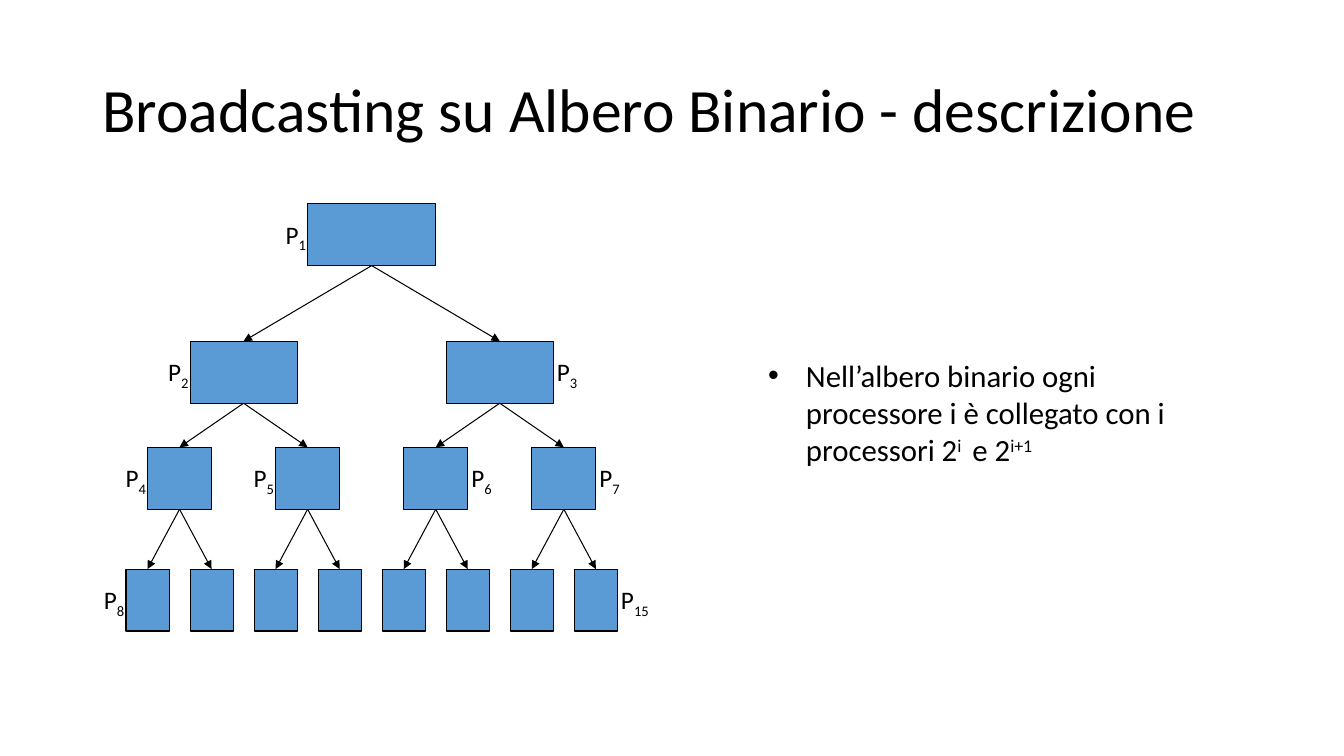
from dataclasses import dataclass

import lxml.etree
import pptx
import pptx.dml.color
import pptx.enum.shapes
import pptx.enum.text
import pptx.oxml.ns
import pptx.util


@dataclass(frozen=True)
class Theme:
    font: str = "Calibri"
    ink: str = "000000"
    node: str = "5B9BD5"
    title_size: int = 44
    body_size: int = 22
    label_size: int = 18
    line_width: float = 0.75


THEME = Theme()
EMU_PER_PX = 9525
SUBSCRIPT, SUPERSCRIPT = -25000, 30000

TREE_LEFT, TREE_WIDTH = 110, 488
NODE_HEIGHT = 59
LEVELS = [(194, 122), (325, 102), (426, 61), (542, 41)]  # top, node width
LABELS_LEFT = (1, 2, 4, 5, 8)
LABELS_RIGHT = (3, 6, 7, 15)


def px(length):
    return pptx.util.Emu(round(length * EMU_PER_PX))


def color(code):
    return pptx.dml.color.RGBColor.from_string(code)


def place(shape, left, top, width, height):
    shape.left, shape.top = px(left), px(top)
    shape.width, shape.height = px(width), px(height)


def add_run(paragraph, text, size, baseline=0):
    """Append a run; baseline is in thousandths of a percent."""
    run = paragraph.add_run()
    run.text = text
    run.font.name = THEME.font
    run.font.size = pptx.util.Pt(size)
    run.font.color.rgb = color(THEME.ink)
    if baseline:
        run.font._element.set("baseline", str(baseline))


def style_line(line):
    line.color.rgb = color(THEME.ink)
    line.width = pptx.util.Pt(THEME.line_width)


def fill_title(title, text):
    place(title, 88, 38, 1104, 139)
    frame = title.text_frame
    frame.auto_size = pptx.enum.text.MSO_AUTO_SIZE.NONE
    frame.vertical_anchor = pptx.enum.text.MSO_ANCHOR.MIDDLE
    paragraph = frame.paragraphs[0]
    paragraph.alignment = pptx.enum.text.PP_ALIGN.LEFT
    paragraph.line_spacing = 0.9
    add_run(paragraph, text, THEME.title_size)


def fill_description(body, pieces):
    """Write one bullet from (text, baseline) pieces."""
    place(body, 722, 335, 428, 116)
    frame = body.text_frame
    frame.auto_size = pptx.enum.text.MSO_AUTO_SIZE.NONE
    paragraph = frame.paragraphs[0]
    paragraph.space_before = pptx.util.Pt(0)
    properties = paragraph._p.get_or_add_pPr()
    properties.set("marL", str(px(36)))
    properties.set("indent", str(px(-36)))
    bullet = lxml.etree.SubElement(properties, pptx.oxml.ns.qn("a:buChar"))
    bullet.set("char", "•")
    for text, baseline in pieces:
        add_run(paragraph, text, THEME.body_size, baseline)


def add_processor(slide, center, top, width):
    processor = slide.shapes.add_shape(
        pptx.enum.shapes.MSO_SHAPE.RECTANGLE,
        px(center - width / 2), px(top), px(width), px(NODE_HEIGHT))
    processor.shadow.inherit = False
    processor.fill.solid()
    processor.fill.fore_color.rgb = color(THEME.node)
    style_line(processor.line)
    return processor


def add_edge(slide, parent, child):
    edge = slide.shapes.add_connector(
        pptx.enum.shapes.MSO_CONNECTOR.STRAIGHT, 0, 0, 0, 0)
    edge.begin_connect(parent, 2)
    edge.end_connect(child, 0)
    style_line(edge.line)
    arrowhead = lxml.etree.SubElement(
        edge.line._get_or_add_ln(), pptx.oxml.ns.qn("a:tailEnd"))
    arrowhead.set("type", "triangle")
    lxml.etree.SubElement(
        edge._element.spPr, pptx.oxml.ns.qn("a:effectLst"))


def add_label(slide, processor, number, on_left):
    width = 40 if number < 10 else 48
    if on_left:
        left = processor.left + px(8 - width)
        alignment = pptx.enum.text.PP_ALIGN.RIGHT
    else:
        left = processor.left + processor.width - px(6)
        alignment = pptx.enum.text.PP_ALIGN.LEFT
    label = slide.shapes.add_textbox(
        left, processor.top + px(10), px(width), px(38))
    frame = label.text_frame
    frame.word_wrap = False
    frame.auto_size = pptx.enum.text.MSO_AUTO_SIZE.SHAPE_TO_FIT_TEXT
    paragraph = frame.paragraphs[0]
    paragraph.alignment = alignment
    add_run(paragraph, "P", THEME.label_size)
    add_run(paragraph, str(number), THEME.label_size, SUBSCRIPT)


def add_tree(slide):
    """Number processors by level, so that the parent of n is n // 2."""
    processors = {}
    for depth, (top, width) in enumerate(LEVELS):
        count = 2 ** depth
        for position in range(count):
            center = TREE_LEFT + TREE_WIDTH * (position + 0.5) / count
            processors[count + position] = add_processor(
                slide, center, top, width)
    for number in range(2, len(processors) + 1):
        add_edge(slide, processors[number // 2], processors[number])
    for number in LABELS_LEFT + LABELS_RIGHT:
        add_label(slide, processors[number], number, number in LABELS_LEFT)


def main():
    presentation = pptx.Presentation()
    presentation.slide_width, presentation.slide_height = px(1280), px(720)
    slide = presentation.slides.add_slide(presentation.slide_layouts[1])
    fill_title(slide.shapes.title, "Broadcasting su Albero Binario - descrizione")
    add_tree(slide)
    fill_description(slide.placeholders[1], [
        ("Nell’albero binario ogni processore i è collegato con i processori 2", 0),
        ("i ", SUPERSCRIPT),
        (" e 2", 0),
        ("i+1", SUPERSCRIPT),
    ])
    presentation.save("out.pptx")


if __name__ == "__main__":
    main()
